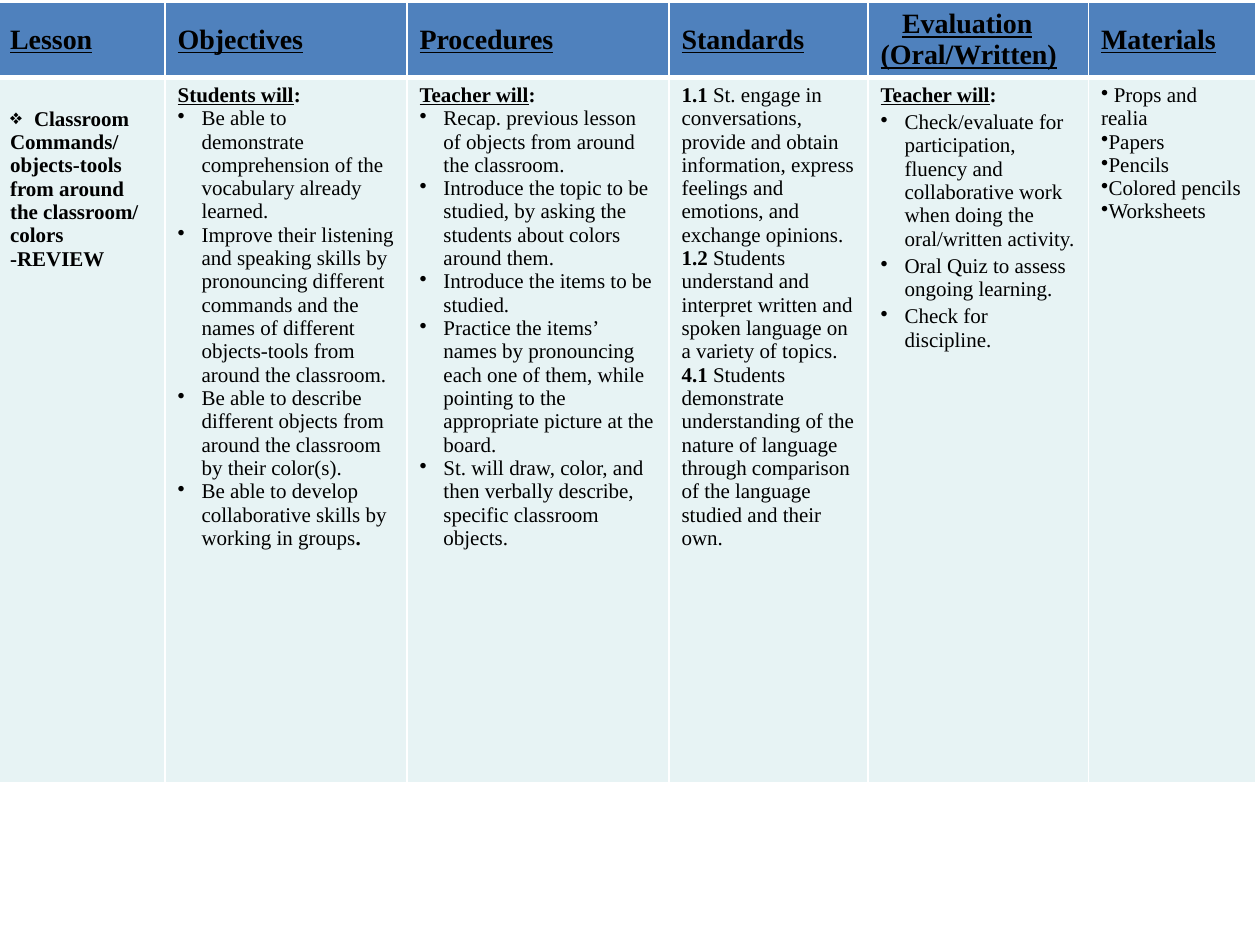
from dataclasses import dataclass

from lxml.etree import SubElement
from pptx import Presentation
from pptx.dml.color import RGBColor
from pptx.enum.text import MSO_ANCHOR
from pptx.oxml.ns import qn
from pptx.table import _Cell
from pptx.text.text import _Paragraph
from pptx.util import Inches, Pt

COLORS = {"header": "4F81BD", "body": "E7F3F4", "border": "FFFFFF", "text": "000000"}
FONT = "Times New Roman"
HEADER_SIZE = 16
BODY_SIZE = 12
HANG = 0.19


@dataclass(frozen=True)
class Span:
    text: str
    bold: bool = False
    underline: bool = False


@dataclass(frozen=True)
class Para:
    spans: tuple[Span, ...]
    bullet: str = ""
    margin: float = 0
    indent: float = 0
    before: float = 0


@dataclass(frozen=True)
class Column:
    width: float
    header: Para
    body: tuple[Para, ...]
    top_margin: float = 0.05


def heading(text: str, indent: float = 0) -> Para:
    return Para((Span(text, True, True),), indent=indent)


def intro(text: str) -> Para:
    return Para((Span(text, True, True), Span(":", True)))


def bullet(*spans: Span, mark: str = "•", before: float = 0) -> Para:
    return Para(spans, mark, HANG, -HANG, before)


def standard(number: str, text: str) -> Para:
    return Para((Span(number, True), Span(f" {text}")))


def material(text: str) -> Para:
    return Para((Span(text),), "•")


COLUMNS = (
    Column(1.33, heading("Lesson"), (
        bullet(Span("Classroom", True), mark="❖"),
        Para((Span("Commands/ objects-tools from around the classroom/", True),)),
        Para((Span("colors -REVIEW", True),)),
    ), top_margin=0.24),
    Column(1.92, heading("Objectives"), (
        intro("Students will"),
        bullet(Span("Be able to demonstrate comprehension of the vocabulary already learned.")),
        bullet(Span("Improve their listening and speaking skills by pronouncing different "
                    "commands and the names of different objects-tools from around the classroom.")),
        bullet(Span("Be able to describe different objects from around the classroom by their color(s).")),
        bullet(Span("Be able to develop collaborative skills by working in groups"), Span(".", True)),
    )),
    Column(2.08, heading("Procedures"), (
        intro("Teacher will"),
        bullet(Span("Recap. previous lesson of objects from around the classroom.")),
        bullet(Span("Introduce the topic to be studied, by asking the students about colors around them.")),
        bullet(Span("Introduce the items to be studied.")),
        bullet(Span("Practice the items’ names by pronouncing each one of them, while pointing "
                    "to the appropriate picture at the board.")),
        bullet(Span("St. will draw, color, and then verbally describe, specific classroom objects.")),
    )),
    Column(1.58, heading("Standards"), (
        standard("1.1", "St. engage in conversations, provide and obtain information, express "
                        "feelings and emotions, and exchange opinions."),
        standard("1.2", "Students understand and interpret written and spoken language on a variety of topics."),
        standard("4.1", "Students demonstrate understanding of the nature of language through "
                        "comparison of the language studied and their own."),
    )),
    Column(1.75, heading("Evaluation (Oral/Written)", indent=0.17), (
        intro("Teacher will"),
        bullet(Span("Check/evaluate for participation, fluency and collaborative work when doing "
                    "the oral/written activity."), before=2.2),
        bullet(Span("Oral Quiz to assess ongoing learning."), before=2.2),
        bullet(Span("Check for discipline."), before=2.2),
    )),
    Column(1.33, heading("Materials"), (
        material(" Props and realia"),
        material("Papers"),
        material("Pencils"),
        material("Colored pencils"),
        material("Worksheets"),
    )),
)


def write_para(para: _Paragraph, content: Para, size: float) -> None:
    if content.before:
        para.space_before = Pt(content.before)
    properties = para._p.get_or_add_pPr()
    properties.set("marL", str(Inches(content.margin)))
    properties.set("indent", str(Inches(content.indent)))
    if content.bullet:
        SubElement(properties, qn("a:buChar"), char=content.bullet)
    else:
        SubElement(properties, qn("a:buNone"))
    para.font.name = FONT
    para.font.size = Pt(size)
    para.font.color.rgb = RGBColor.from_string(COLORS["text"])
    for item in content.spans:
        span = para.add_run()
        span.text = item.text
        span.font.bold = item.bold
        span.font.underline = item.underline


def add_borders(cell: _Cell, top: float, bottom: float) -> None:
    properties = cell._tc.get_or_add_tcPr()
    for tag, width in (("a:lnL", 1), ("a:lnR", 1), ("a:lnT", top), ("a:lnB", bottom)):
        line = SubElement(properties, qn(tag), w=str(Pt(width)))
        fill = SubElement(line, qn("a:solidFill"))
        SubElement(fill, qn("a:srgbClr"), val=COLORS["border"])


def fill_cell(cell: _Cell, content: tuple[Para, ...], size: float, color: str) -> None:
    cell.fill.solid()
    cell.fill.fore_color.rgb = RGBColor.from_string(COLORS[color])
    frame = cell.text_frame
    for index, item in enumerate(content):
        para = frame.add_paragraph() if index else frame.paragraphs[0]
        write_para(para, item, size)


def main() -> None:
    deck = Presentation()
    deck.slide_width, deck.slide_height = Inches(10), Inches(7.5)
    page = deck.slides.add_slide(deck.slide_layouts[6])
    plan = page.shapes.add_table(
        2, len(COLUMNS), Inches(-0.02), Inches(0.02), Inches(10), Inches(8.93))
    table = plan.table
    table.first_row = False
    table.horz_banding = False
    for row, height in zip(table.rows, (0.55, 5.6)):
        row.height = Inches(height)
    for index, column in enumerate(COLUMNS):
        table.columns[index].width = Inches(column.width)
        header, body = table.cell(0, index), table.cell(1, index)
        add_borders(header, 1, 3)
        add_borders(body, 3, 1)
        fill_cell(header, (column.header,), HEADER_SIZE, "header")
        fill_cell(body, column.body, BODY_SIZE, "body")
        header.vertical_anchor = MSO_ANCHOR.MIDDLE
        body.margin_top = Inches(column.top_margin)
    plan.height = Inches(8.93)
    deck.save("out.pptx")


if __name__ == "__main__":
    main()
